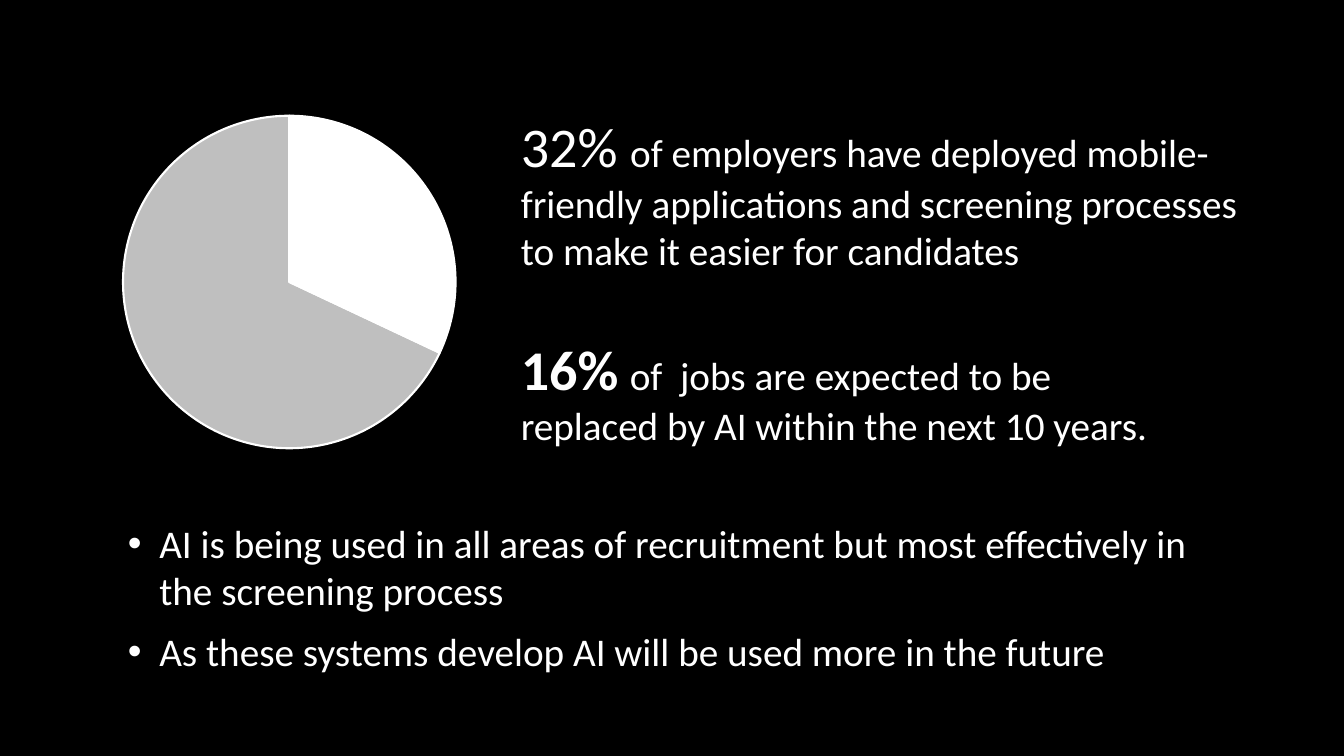
from lxml.etree import SubElement as Sub
from pptx import Presentation
from pptx.chart.data import CategoryChartData as Data
from pptx.dml.color import RGBColor as RGB
from pptx.enum.chart import XL_CHART_TYPE as Kind
from pptx.enum.text import MSO_ANCHOR as Anchor
from pptx.oxml import parse_xml
from pptx.oxml.ns import nsdecls, qn
from pptx.util import Pt

BLACK = RGB(0, 0, 0)
WHITE = RGB(255, 255, 255)
BASE = {"name": "Calibri", "size": Pt(28), "bold": False}
BIG = {"size": Pt(40)}
BOLD = {"size": Pt(40), "bold": True}


def style(font, form):
    """Set the base format on a font, with the given changes."""
    for key, val in {**BASE, **form}.items():
        setattr(font, key, val)
    font.color.rgb = WHITE


def frame(slide, box, anchor=Anchor.TOP):
    """Add a wrapping text box and return its text frame."""
    text = slide.shapes.add_textbox(*map(Pt, box)).text_frame
    text.word_wrap = True
    text.vertical_anchor = anchor
    return text


def fact(slide, box, runs):
    """Write one figure and its statement in the box."""
    para = frame(slide, box).paragraphs[0]
    for words, form in runs:
        run = para.add_run()
        run.text = words
        style(run.font, form)


def points(slide, box, items):
    """Write the bulleted items in the middle of the box."""
    text = frame(slide, box, Anchor.MIDDLE)
    for num, words in enumerate(items):
        para = text.add_paragraph() if num else text.paragraphs[0]
        props = para._p.get_or_add_pPr()
        props.set("marL", str(Pt(22.5)))
        props.set("indent", str(-Pt(22.5)))
        tint = Sub(props, qn("a:buClr"))
        Sub(tint, qn("a:srgbClr"), val=str(WHITE))
        Sub(props, qn("a:buFont"), typeface="Arial")
        Sub(props, qn("a:buChar"), char="•")
        para.space_after = Pt(10)
        run = para.add_run()
        run.text = words
        style(run.font, {})


def pie(slide, box, share):
    """Draw a share of one hundred as a pie in the box."""
    data = Data()
    data.categories = ["1", "2"]
    data.add_series("Series 1", (share, 100 - share))
    chart = slide.shapes.add_chart(Kind.PIE, *map(Pt, box), data).chart
    chart.has_legend = chart.has_title = False
    style(chart.font, {"size": Pt(10)})
    plot = chart.plots[0]
    plot.vary_by_categories = False
    for num in range(2):
        form = plot.series[0].points[num].format
        form.fill.solid()
        form.fill.fore_color.rgb = WHITE
        form.line.color.rgb = WHITE
        form.line.width = Pt(1.5)
    rest = chart.element.xpath("//c:dPt[2]/c:spPr/a:solidFill/a:srgbClr")[0]
    Sub(rest, qn("a:alpha"), val="75000")
    area = chart.element.xpath("//c:plotArea")[0]
    for old in area.findall(qn("c:layout")):
        area.remove(old)
    sides = {"x": 0.19, "y": 0.07, "w": 0.54, "h": 0.92}
    marks = '<c:layoutTarget val="inner"/><c:xMode val="edge"/><c:yMode val="edge"/>'
    marks += "".join(f'<c:{key} val="{val}"/>' for key, val in sides.items())
    area.insert(0, parse_xml(
        f'<c:layout {nsdecls("c")}><c:manualLayout>{marks}</c:manualLayout></c:layout>'))


def main():
    """Build the slide and save it."""
    deck = Presentation()
    deck.slide_width, deck.slide_height = Pt(960), Pt(540)
    slide = deck.slides.add_slide(deck.slide_layouts[6])
    fill = slide.background.fill
    fill.solid()
    fill.fore_color.rgb = BLACK
    points(slide, (84.24, 282.96, 772.56, 287.28), [
        "AI is being used in all areas of recruitment but most effectively in the screening process",
        "As these systems develop AI will be used more in the future"])
    fact(slide, (365, 235.44, 470.16, 111.6), [
        ("16%", BOLD), (" ", {"size": Pt(36), "bold": True}),
        ("of  jobs are expected to be replaced by AI within the next 10 years.", {})])
    pie(slide, (4.32, 64.08, 439.92, 259.2), 32)
    fact(slide, (365, 76.32, 543.6, 123.84), [
        ("32% ", BIG),
        ("of employers have deployed mobile-friendly applications and screening "
         "processes to make it easier for candidates", {})])
    deck.save("out.pptx")


if __name__ == "__main__":
    main()
